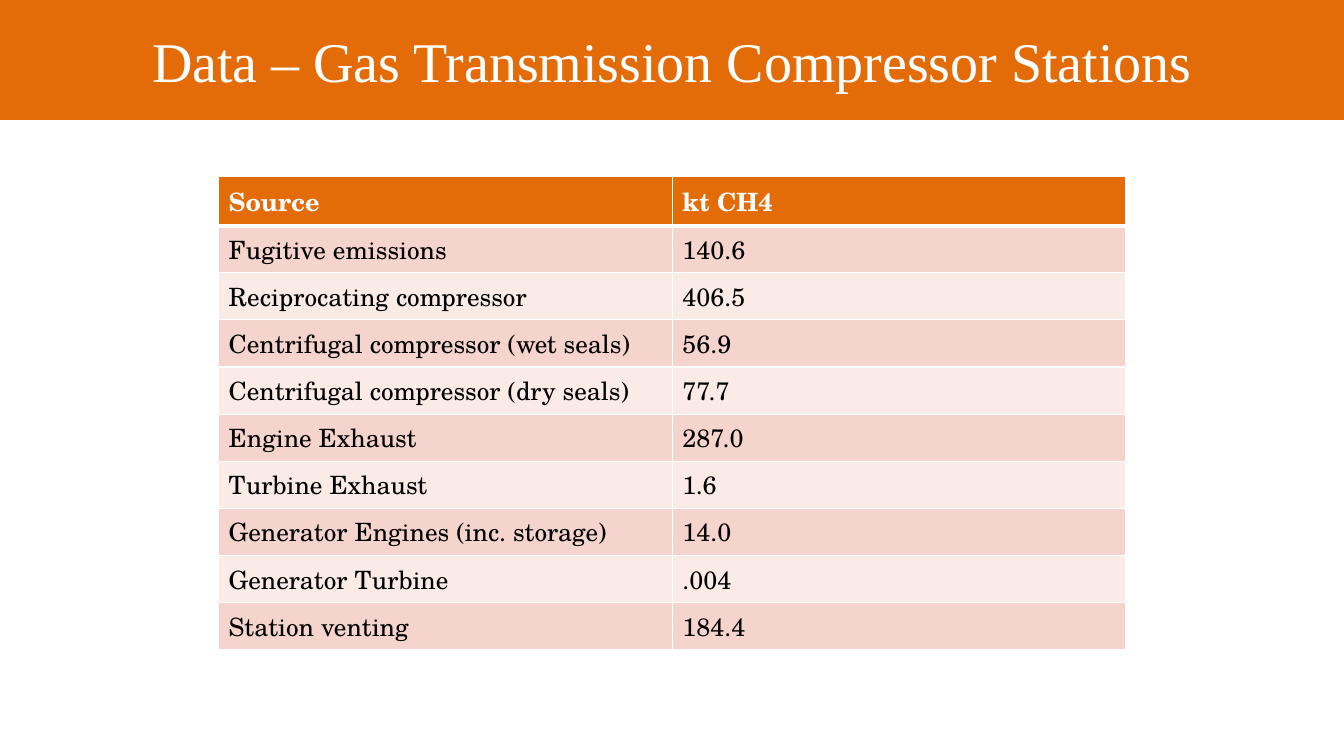
from dataclasses import dataclass

from lxml.etree import SubElement
from pptx import Presentation
from pptx.dml.color import RGBColor as Rgb
from pptx.enum.text import MSO_ANCHOR as Anchor, MSO_AUTO_SIZE as Fit, PP_ALIGN as Align
from pptx.oxml.ns import qn
from pptx.slide import Slide
from pptx.table import _Cell as Cell
from pptx.util import Cm, Pt


@dataclass(frozen=True)
class Theme:
    orange: str = "E36C09"
    dark: str = "F4D4CC"
    pale: str = "FAEBE7"
    white: str = "FFFFFF"
    black: str = "000000"
    head: str = "Times New Roman"
    body: str = "TeX Gyre Schola"
    big: int = 40
    text: int = 18
    thin: int = 1
    thick: int = 3


@dataclass(frozen=True)
class Source:
    name: str
    amount: str


@dataclass(frozen=True)
class Look:
    fill: str
    color: str
    bold: bool
    top: int
    base: int


THEME = Theme()
HEADER = Source("Source", "kt CH4")
SOURCES = [
    Source("Fugitive emissions", "140.6"),
    Source("Reciprocating compressor", "406.5"),
    Source("Centrifugal compressor (wet seals)", "56.9"),
    Source("Centrifugal compressor (dry seals)", "77.7"),
    Source("Engine Exhaust", "287.0"),
    Source("Turbine Exhaust", "1.6"),
    Source("Generator Engines (inc. storage)", "14.0"),
    Source("Generator Turbine", ".004"),
    Source("Station venting", "184.4"),
]


def assign(target: object, values: dict) -> None:
    for key, value in values.items():
        setattr(target, key, value)


def paint(fill, color: str) -> None:
    fill.solid()
    fill.fore_color.rgb = Rgb.from_string(color)


def style(font, name: str, size: int, color: str, bold: bool = False) -> None:
    assign(font, {"name": name, "size": Pt(size), "bold": bold})
    font.color.rgb = Rgb.from_string(color)


def border(cell: Cell, side: str, width: int) -> None:
    props = cell._tc.get_or_add_tcPr()
    line = SubElement(props, qn(f"a:ln{side}"), w=str(Pt(width)))
    SubElement(SubElement(line, qn("a:solidFill")), qn("a:srgbClr"), val=THEME.white)


def look(row: int) -> Look:
    if row == 0:
        return Look(THEME.orange, THEME.white, True, THEME.thin, THEME.thick)
    fill = THEME.dark if row % 2 else THEME.pale
    top = THEME.thick if row == 1 else THEME.thin
    return Look(fill, THEME.black, False, top, THEME.thin)


def draw_cell(cell: Cell, text: str, form: Look) -> None:
    widths = {"L": THEME.thin, "R": THEME.thin, "T": form.top, "B": form.base}
    for side, width in widths.items():
        border(cell, side, width)
    paint(cell.fill, form.fill)
    run = cell.text_frame.paragraphs[0].add_run()
    run.text = text
    style(run.font, THEME.body, THEME.text, form.color, form.bold)


def draw_title(slide: Slide, text: str, width: int) -> None:
    title = slide.shapes.title
    assign(title, {"left": 0, "top": 0, "width": width, "height": Cm(3.02)})
    paint(title.fill, THEME.orange)
    frame = title.text_frame
    assign(frame, {"word_wrap": True, "auto_size": Fit.NONE,
                   "vertical_anchor": Anchor.MIDDLE})
    par = frame.paragraphs[0]
    par.alignment = Align.CENTER
    run = par.add_run()
    run.text = text
    style(run.font, THEME.head, THEME.big, THEME.white)


def draw_table(slide: Slide, rows: list[Source]) -> None:
    size = len(rows)
    table = slide.shapes.add_table(
        size, 2, Cm(5.51), Cm(4.45), Cm(22.86), Cm(1.03) * size).table
    for index, source in enumerate(rows):
        for col, text in enumerate((source.name, source.amount)):
            draw_cell(table.cell(index, col), text, look(index))


def main() -> None:
    deck = Presentation()
    assign(deck, {"slide_width": Cm(33.87), "slide_height": Cm(19.05)})
    slide = deck.slides.add_slide(deck.slide_layouts[5])
    paint(slide.background.fill, THEME.white)

    # Title band
    draw_title(slide, "Data – Gas Transmission Compressor Stations", deck.slide_width)

    # Emissions table
    draw_table(slide, [HEADER, *SOURCES])

    deck.save("out.pptx")


if __name__ == "__main__":
    main()
